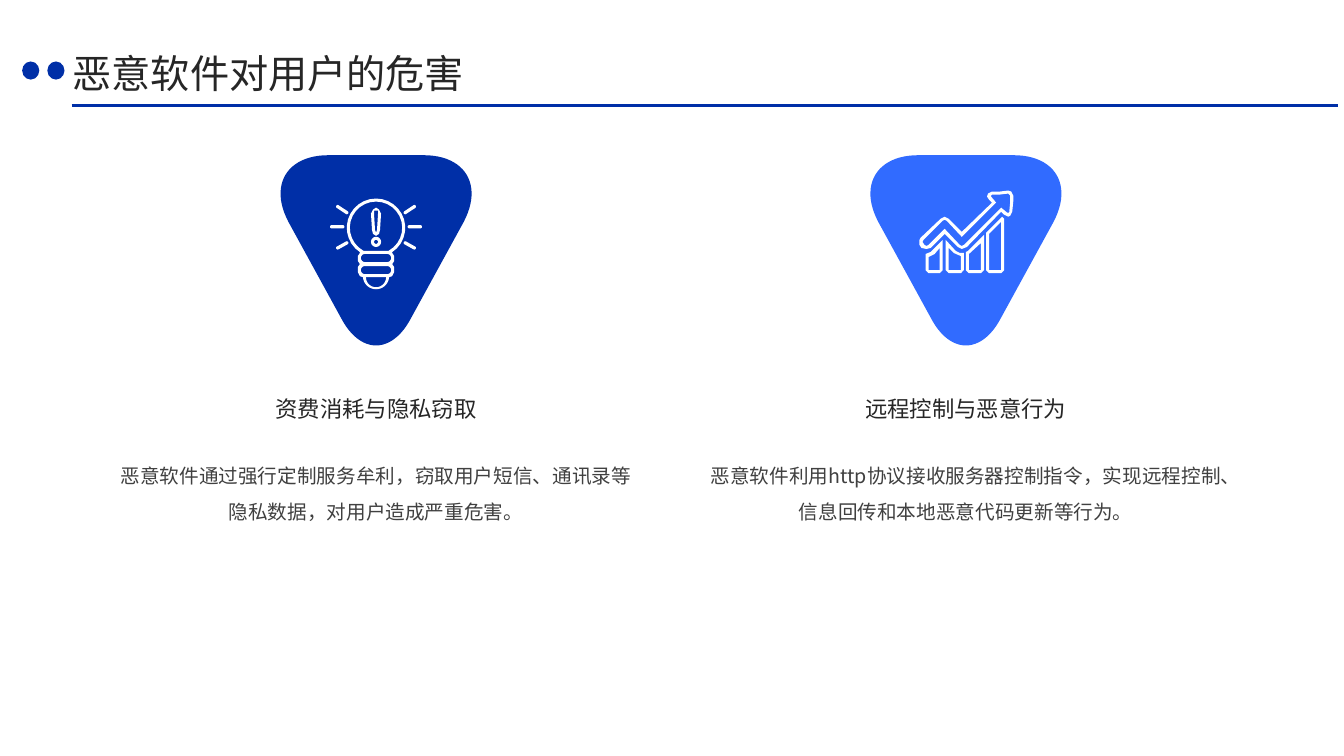
from math import atan2, cos, degrees, radians, sin

from lxml import etree
from pptx import Presentation
from pptx.dml.color import RGBColor
from pptx.enum.shapes import MSO_CONNECTOR, MSO_SHAPE
from pptx.enum.text import MSO_ANCHOR, PP_ALIGN
from pptx.oxml.ns import qn
from pptx.util import Inches, Pt

OVAL, STRAIGHT = MSO_SHAPE.OVAL, MSO_CONNECTOR.STRAIGHT
MIDDLE, TOP = MSO_ANCHOR.MIDDLE, MSO_ANCHOR.TOP
LEFT, CENTER = PP_ALIGN.LEFT, PP_ALIGN.CENTER
FONT = "Noto Sans CJK SC"
NAVY, BLUE, WHITE, INK, GREY = "002FA7", "316BFF", "FFFFFF", "262626", "404040"
EDGE, COL, STEP = 1.15, 5.16, 5.85  # first column, column width, column pitch
MIDS = [EDGE + COL / 2 + i * STEP for i in range(2)]

prs = Presentation()
prs.slide_width, prs.slide_height = Inches(13.33), Inches(7.5)
slide = prs.slides.add_slide(prs.slide_layouts[6])
shapes = slide.shapes


def tint(code):
    return RGBColor.from_string(code)


def arc(x, y, r, start, end):
    """Points on a circle, clockwise on the slide, in degrees."""
    return [(x + r * cos(radians(start + (end - start) * n / 24)),
             y + r * sin(radians(start + (end - start) * n / 24)))
            for n in range(25)]


# Rounded triangle: three Bezier corners joined by straight sides
corners = [
    [(.47, 1.54), (.89, 1.54), (1.06, 1.84), (.87, 2.2)],
    [(.35, 3.15), (.16, 3.52), (-.16, 3.52), (-.35, 3.15)],
    [(-.87, 2.2), (-1.06, 1.84), (-.89, 1.54), (-.47, 1.54)],
]
badge = []
for a, b, c, d in corners:
    for n in range(25):
        t = n / 24
        u = 1 - t
        badge.append([u**3 * a[k] + 3 * u * u * t * b[k] + 3 * u * t * t * c[k]
                      + t**3 * d[k] for k in range(2)])

# Light bulb: rim, hollow glass, hollow base and exclamation mark
side = [(.16, 2.47), (.16, 2.51), (.18, 2.54), (.18, 2.59), (.16, 2.62),
        (.18, 2.65), (.18, 2.7), (.16, 2.74), (.13, 2.75)]
bulb = [
    arc(0, 2.26, .29, 123, 417) + side + arc(0, 2.74, .13, 5, 175)
    + [(-x, y) for x, y in reversed(side)],
    arc(0, 2.26, .26, 119, 421) + [(.12, 2.49), (-.12, 2.49)],
    arc(0, 2.75, .1, 0, 180),
    [(-.05, 2.12), (-.03, 2.08), (0, 2.06), (.03, 2.08), (.05, 2.12),
     (.04, 2.28), (.03, 2.32), (0, 2.34), (-.03, 2.32), (-.04, 2.28)],
    [(-.02, 2.12), (-.02, 2.09), (.02, 2.09), (.02, 2.12),
     (.01, 2.28), (0, 2.31), (-.01, 2.28)],
]

# Round-ended bars: base slots, the mark's dot and the rays
bars = [(-.11, 2.56, .11, 2.56, .04), (-.11, 2.68, .11, 2.68, .04),
        (0, 2.4, 0, 2.4, .05), (0, 2.4, 0, 2.4, .02)]
for sign in (-1, 1):
    for x1, y1, x2, y2 in [(.29, 2.11, .38, 2.05), (.33, 2.25, .44, 2.25),
                           (.29, 2.41, .38, 2.46)]:
        bars.append((sign * x1, y1, sign * x2, y2, .016))
for x1, y1, x2, y2, r in bars:
    turn = degrees(atan2(y2 - y1, x2 - x1))
    bulb.append(arc(x1, y1, r, turn + 90, turn + 270)
                + arc(x2, y2, r, turn - 90, turn + 90))

# Rising chart: arrow band and four bars, each an outer and an inner edge
chart = [
    [(.42, 1.89), (.45, 1.9), (.47, 1.94), (.47, 2), (.46, 2.1), (.44, 2.14),
     (.42, 2.15), (.38, 2.13), (.35, 2.1), (.01, 2.45), (-.04, 2.47),
     (-.08, 2.45), (-.21, 2.32), (-.35, 2.46), (-.39, 2.47), (-.44, 2.46),
     (-.46, 2.43), (-.46, 2.38), (-.45, 2.36), (-.25, 2.17), (-.21, 2.15),
     (-.17, 2.17), (-.04, 2.3), (.26, 2.01), (.23, 1.98), (.21, 1.95),
     (.22, 1.92), (.26, 1.9), (.34, 1.9)],
    [(.42, 1.92), (.34, 1.93), (.26, 1.93), (.25, 1.94), (.25, 1.95),
     (.3, 2.01), (-.04, 2.35), (-.19, 2.19), (-.21, 2.18), (-.23, 2.19),
     (-.42, 2.38), (-.43, 2.4), (-.41, 2.43), (-.39, 2.44), (-.37, 2.43),
     (-.21, 2.27), (-.06, 2.43), (-.04, 2.44), (-.02, 2.43), (.35, 2.06),
     (.41, 2.11), (.43, 2.11), (.44, 2), (.44, 1.94)],
]
tops = [
    [(-.4, 2.52), (-.35, 2.5), (-.23, 2.38)],
    [(-.37, 2.55), (-.31, 2.52), (-.26, 2.46)],
    [(-.2, 2.38), (-.1, 2.49), (-.06, 2.51), (-.02, 2.51)],
    [(-.17, 2.46), (-.12, 2.51), (-.05, 2.54)],
    [(0, 2.5), (.02, 2.49), (.18, 2.33)],
    [(.03, 2.52), (.15, 2.41)],
    [(.2, 2.31), (.36, 2.15), (.38, 2.17)],
    [(.23, 2.32), (.35, 2.2)],
]
for n, top in enumerate(tops):
    left, right = top[0][0], top[-1][0]
    if n % 2:
        foot = [(right, 2.68), (left, 2.68)]
    else:
        foot = [(right, 2.68), (right - .03, 2.71),
                (left + .03, 2.71), (left, 2.68)]
    chart.append(top + foot)

# Each drawing is one shape; x counts from the column's middle
for mid, fill, icon in zip(MIDS, (NAVY, BLUE), (bulb, chart)):
    for rings, color in (([badge], fill), (icon, WHITE)):
        pen = None
        for ring in rings:
            spots = [(Inches(mid + x), Inches(y)) for x, y in ring]
            if pen is None:
                pen = shapes.build_freeform(*spots[0], scale=1.0)
            else:
                pen.move_to(*spots[0])
            pen.add_line_segments(spots[1:], close=True)
        form = pen.convert_to_shape()
        form.shadow.inherit = False
        form.fill.solid()
        form.fill.fore_color.rgb = tint(color)
        form.line.fill.background()

# Headings, body text and title
texts = []
notes = [
    ("资费消耗与隐私窃取",
     "恶意软件通过强行定制服务牟利，窃取用户短信、通讯录等隐私数据，对用户造成严重危害。"),
    ("远程控制与恶意行为",
     "恶意软件利用http协议接收服务器控制指令，实现远程控制、信息回传和本地恶意代码更新等行为。"),
]
for mid, (head, body) in zip(MIDS, notes):
    x = mid - COL / 2
    texts.append((x, 3.54, COL, .94, head, 16, INK, CENTER, MIDDLE, 1.3))
    texts.append((x, 4.49, COL, 1.94, body, 14, GREY, CENTER, TOP, 1.5))
texts.append((.72, .44, 11.67, .51, "恶意软件对用户的危害", 28, INK, LEFT, MIDDLE, 1.1))
for x, y, w, h, words, size, color, align, anchor, space in texts:
    frame = shapes.add_textbox(*map(Inches, (x, y, w, h))).text_frame
    frame.word_wrap = True
    frame.vertical_anchor = anchor
    frame.margin_left = frame.margin_right = 0
    frame.margin_top = frame.margin_bottom = 0
    para = frame.paragraphs[0]
    para.alignment = align
    para.line_spacing = space
    run = para.add_run()
    run.text = words
    run.font.size = Pt(size)
    run.font.color.rgb = tint(color)
    run.font.name = FONT
    etree.SubElement(run.font._element, qn("a:ea"), typeface=FONT)

# Title rule and dots
rule = shapes.add_connector(STRAIGHT, *map(Inches, (.71, 1.05, 13.27, 1.05)))
rule.line.color.rgb = tint(NAVY)
rule.line.width = Pt(2.25)
etree.SubElement(rule._element.spPr, qn("a:effectLst"))
for x in (.47, .22):
    dot = shapes.add_shape(OVAL, *map(Inches, (x, .61, .17, .18)))
    dot.shadow.inherit = False
    dot.fill.solid()
    dot.fill.fore_color.rgb = tint(NAVY)
    dot.line.fill.background()

prs.save("out.pptx")
